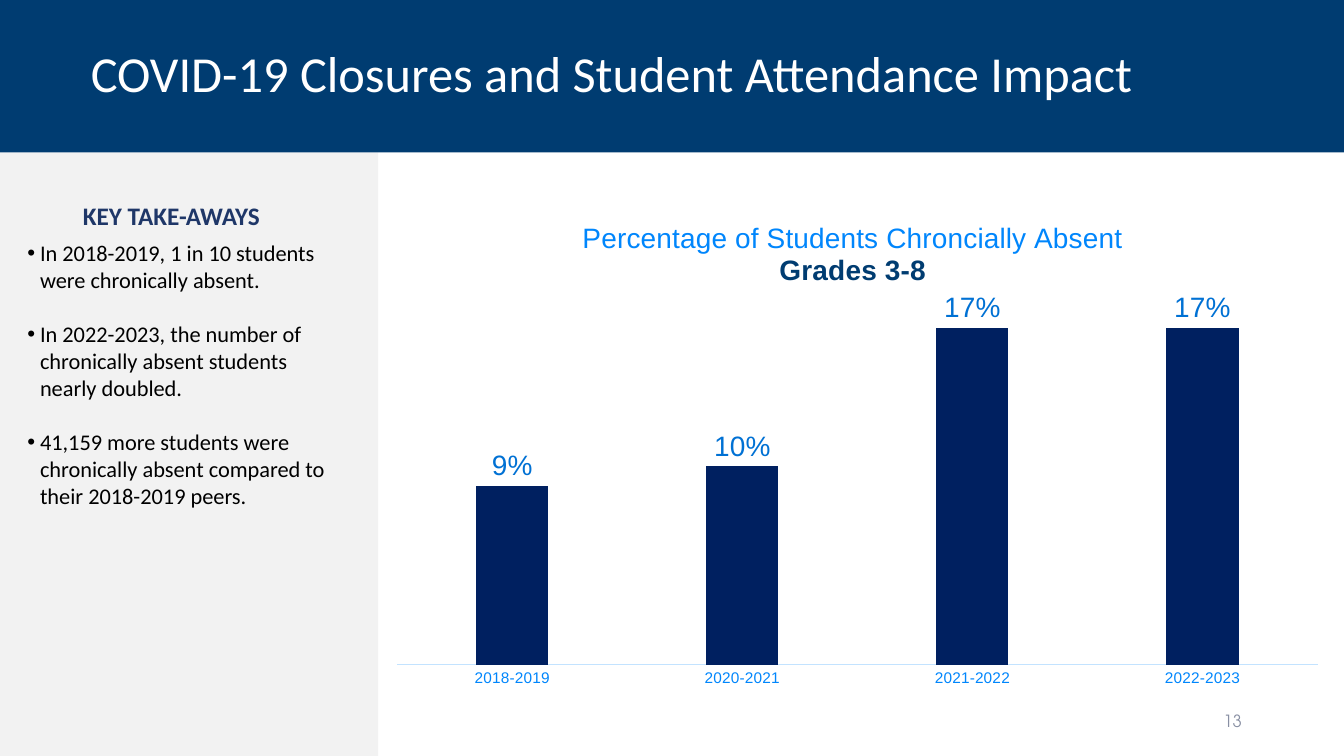
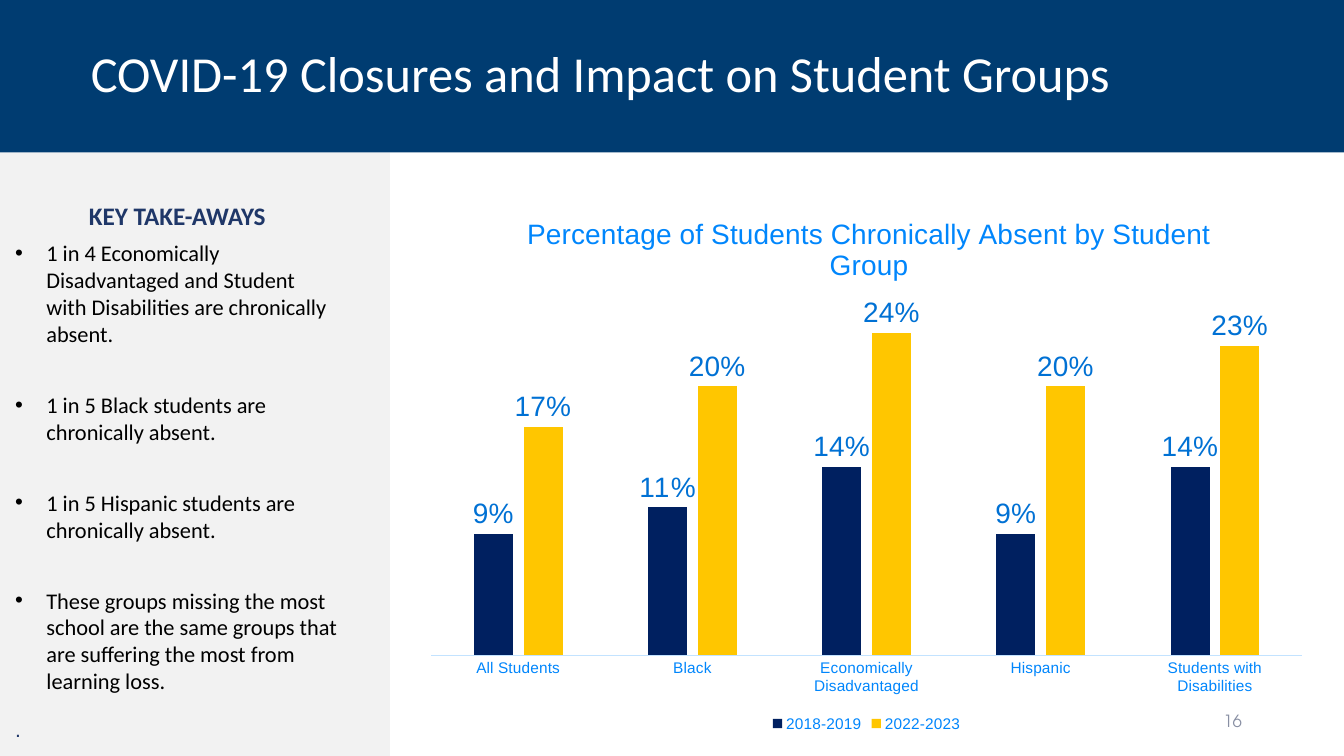
"""Build two slides on school closures and chronic absence."""
from dataclasses import dataclass, field

from pptx import Presentation
from pptx.chart.data import CategoryChartData
from pptx.dml.color import RGBColor
from pptx.enum.chart import XL_CHART_TYPE, XL_LABEL_POSITION, XL_LEGEND_POSITION, XL_TICK_MARK
from pptx.enum.shapes import MSO_SHAPE
from pptx.enum.text import MSO_ANCHOR, PP_ALIGN
from pptx.oxml import parse_xml
from pptx.oxml.ns import nsdecls, qn
from pptx.util import Cm, Pt


def text_format(name, size, color, bold=False):
    return {"name": name, "size": Pt(size), "bold": bold, "color": color}


@dataclass(frozen=True)
class Theme:
    band: str = "003C71"
    panel: str = "F2F2F2"
    axis_line: str = "C3E3FF"
    bars: tuple = ("002060", "FFC600")
    text: dict = field(default_factory=lambda: {
        "title": text_format("Calibri", 36, "FFFFFF"),
        "heading": text_format("Calibri", 18, "1F3768", True),
        "bullet": text_format("Calibri", 16, "000000"),
        "closing": text_format("Arial", 15, "1F3768"),
        "number": text_format("TeX Gyre Adventor", 12, "888FA3"),
        "chart": text_format("Arial", 10, "003C71"),
        "chart title": text_format("Arial", 20, "0086FC"),
        "chart subtitle": text_format("Arial", 20, "003C71", True),
        "axis": text_format("Arial", 11, "0086FC"),
        "value": text_format("Arial", 20, "0071D4"),
    })


THEME = Theme()
WIDTH, HEIGHT, BAND = 33.87, 19.05, 3.84

PAGES = [
    {
        "title": "COVID-19 Closures and Student Attendance Impact",
        "number": "13",
        "panel_width": 9.53,
        "bullets": [
            "In 2018-2019, 1 in 10 students were chronically absent.",
            "In 2022-2023, the number of chronically absent students nearly doubled.",
            "41,159 more students were chronically absent compared to their 2018-2019 peers.",
        ],
        "closing": [],
        "indent": (0.63, -0.32),
        "gap_before": 19.5,
        "gap_after": 0,
        "chart_area": (9.53, 5.13, 24.16, 12.5),
        "chart_title": [
            ("Percentage of Students Chroncially Absent", "chart title"),
            ("Grades 3-8", "chart subtitle"),
        ],
        "title_place": {"x": 0.21, "y": 0.03},
        "plot_place": {"x": 0.02, "y": 0.21, "w": 0.96, "h": 0.72},
        "maximum": 0.18,
        "categories": ["2018-2019", "2020-2021", "2021-2022", "2022-2023"],
        "series": {"Series 1": (0.09, 0.1, 0.17, 0.17)},
    },
    {
        "title": "COVID-19 Closures and Impact on Student Groups",
        "number": "16",
        "panel_width": 9.83,
        "bullets": [
            "1 in 4 Economically Disadvantaged and Student with Disabilities are chronically absent.",
            "1 in 5 Black students are chronically absent.",
            "1 in 5 Hispanic students are chronically absent.",
            "These groups missing the most school are the same groups that are suffering the most from learning loss.",
        ],
        "closing": ["."],
        "indent": (0.79, -0.79),
        "gap_before": 25.5,
        "gap_after": 6,
        "chart_area": (10.41, 4.9, 22.86, 13.66),
        "chart_title": [
            ("Percentage of Students Chronically Absent by Student Group", "chart title"),
        ],
        "title_place": {"x": 0.12, "y": 0.03},
        "plot_place": {"x": 0.02, "y": 0.23, "w": 0.96, "h": 0.62},
        "maximum": 0.25,
        "categories": ["All Students", "Black", "Economically Disadvantaged",
                       "Hispanic", "Students with Disabilities"],
        "series": {
            "2018-2019": (0.09, 0.11, 0.14, 0.09, 0.14),
            "2022-2023": (0.17, 0.2, 0.24, 0.2, 0.23),
        },
    },
]


def apply_format(font, style):
    for name, value in THEME.text[style].items():
        if name == "color":
            font.color.rgb = RGBColor.from_string(value)
        else:
            setattr(font, name, value)


def place_in_chart(parent, index, position):
    for old_layout in parent.findall(qn("c:layout")):
        parent.remove(old_layout)
    target = '<c:layoutTarget val="inner"/>' if "w" in position else ""
    values = "".join(f'<c:{name} val="{value}"/>' for name, value in position.items())
    parent.insert(index, parse_xml(
        f'<c:layout {nsdecls("c")}><c:manualLayout>{target}'
        f'<c:xMode val="edge"/><c:yMode val="edge"/>{values}</c:manualLayout></c:layout>'))


deck = Presentation()
deck.slide_width, deck.slide_height = Cm(WIDTH), Cm(HEIGHT)

for content in PAGES:
    page = deck.slides.add_slide(deck.slide_layouts[6])

    after = Pt(content["gap_after"])
    lines = [("KEY TAKE-AWAYS", "heading", {"alignment": PP_ALIGN.CENTER, "space_after": Pt(6)})]
    for position, bullet in enumerate(content["bullets"]):
        before = Pt(content["gap_before"] if position else 0)
        lines.append((bullet, "bullet", {"space_before": before, "space_after": after}))
    for closing in content["closing"]:
        lines.append((closing, "closing", {"space_before": Pt(10)}))

    boxes = [
        ((0, BAND, content["panel_width"], HEIGHT - BAND), THEME.panel,
         (0.38, 1.22, 1.27, 0.25), MSO_ANCHOR.TOP, lines),
        ((0, 0, WIDTH, BAND), THEME.band, (2.29, 0.13, 0.25, 0.13), MSO_ANCHOR.MIDDLE,
         [(content["title"], "title", {"line_spacing": 0.9})]),
        ((23.93, 17.65, 7.62, 1.02), None, (0.25, 0.13, 0.25, 0.13), MSO_ANCHOR.MIDDLE,
         [(content["number"], "number", {"alignment": PP_ALIGN.RIGHT})]),
    ]
    for area, fill, margins, anchor, paragraphs in boxes:
        area = [Cm(length) for length in area]
        if fill:
            box = page.shapes.add_shape(MSO_SHAPE.RECTANGLE, *area)
            box.shadow.inherit = False
            box.fill.solid()
            box.fill.fore_color.rgb = RGBColor.from_string(fill)
            box.line.fill.background()
        else:
            box = page.shapes.add_textbox(*area)
        frame = box.text_frame
        frame.word_wrap = True
        frame.vertical_anchor = anchor
        for side, margin in zip(("left", "top", "right", "bottom"), margins):
            setattr(frame, f"margin_{side}", Cm(margin))
        for position, (text, style, formats) in enumerate(paragraphs):
            para = frame.add_paragraph() if position else frame.paragraphs[0]
            for name, value in {"alignment": PP_ALIGN.LEFT, **formats}.items():
                setattr(para, name, value)
            span = para.add_run()
            span.text = text
            apply_format(span.font, style)
            if style == "bullet":
                properties = para._p.get_or_add_pPr()
                for name, length in zip(("marL", "indent"), content["indent"]):
                    properties.set(name, str(Cm(length)))
                color = THEME.text["bullet"]["color"]
                for markup in (f'<a:buClr {nsdecls("a")}><a:srgbClr val="{color}"/></a:buClr>',
                               f'<a:buFont {nsdecls("a")} typeface="Arial"/>',
                               f'<a:buChar {nsdecls("a")} char="•"/>'):
                    properties.append(parse_xml(markup))

    data = CategoryChartData(number_format="0%")
    data.categories = content["categories"]
    for name, values in content["series"].items():
        data.add_series(name, values)
    chart = page.shapes.add_chart(
        XL_CHART_TYPE.COLUMN_CLUSTERED, *[Cm(length) for length in content["chart_area"]], data).chart
    apply_format(chart.font, "chart")

    chart.has_title = True
    title_frame = chart.chart_title.text_frame
    for position, (text, style) in enumerate(content["chart_title"]):
        para = title_frame.add_paragraph() if position else title_frame.paragraphs[0]
        para.alignment = PP_ALIGN.CENTER
        span = para.add_run()
        span.text = text
        apply_format(span.font, style)
    place_in_chart(chart.element.find(".//" + qn("c:title")), 1, content["title_place"])
    place_in_chart(chart.element.find(".//" + qn("c:plotArea")), 0, content["plot_place"])

    category_axis = chart.category_axis
    category_axis.major_tick_mark = XL_TICK_MARK.NONE
    category_axis.format.line.width = Pt(0.75)
    category_axis.format.line.color.rgb = RGBColor.from_string(THEME.axis_line)
    apply_format(category_axis.tick_labels.font, "axis")
    value_axis_formats = {"visible": False, "has_major_gridlines": False,
                          "minimum_scale": 0, "maximum_scale": content["maximum"]}
    for name, value in value_axis_formats.items():
        setattr(chart.value_axis, name, value)

    plot = chart.plots[0]
    for name, value in {"gap_width": 219, "overlap": -27, "vary_by_categories": False}.items():
        setattr(plot, name, value)
    label_formats = {"show_value": True, "position": XL_LABEL_POSITION.OUTSIDE_END,
                     "number_format": "0%", "number_format_is_linked": False}
    for series, color in zip(plot.series, THEME.bars):
        series.format.fill.solid()
        series.format.fill.fore_color.rgb = RGBColor.from_string(color)
        for name, value in label_formats.items():
            setattr(series.data_labels, name, value)
        apply_format(series.data_labels.font, "value")

    chart.has_legend = len(content["series"]) > 1
    if chart.has_legend:
        chart.legend.position = XL_LEGEND_POSITION.BOTTOM
        chart.legend.include_in_layout = False
        apply_format(chart.legend.font, "axis")

deck.save("out.pptx")
